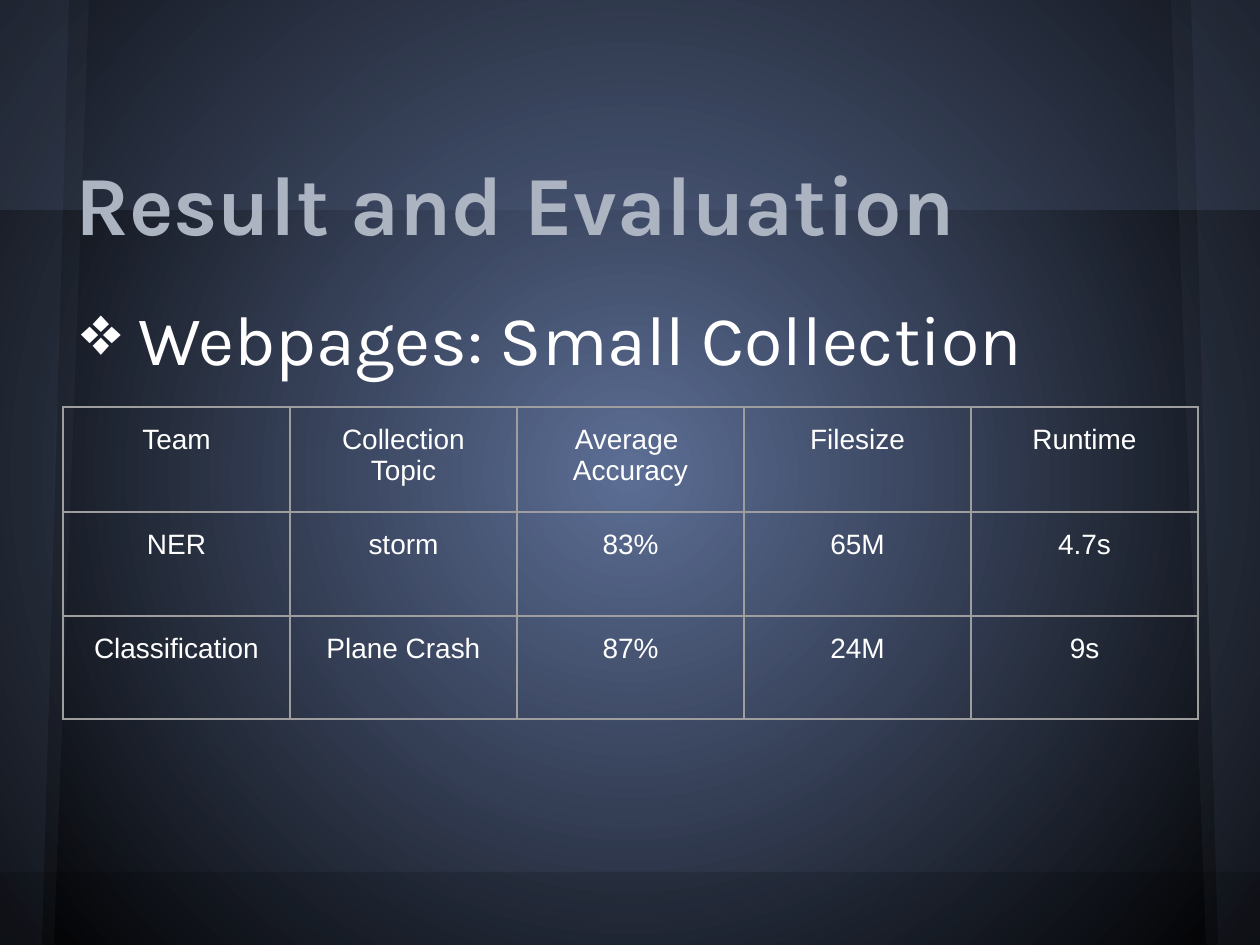
from typing import NamedTuple

from lxml.etree import SubElement
from pptx import Presentation
from pptx.dml.color import RGBColor
from pptx.enum.shapes import MSO_SHAPE
from pptx.enum.text import MSO_ANCHOR, PP_ALIGN
from pptx.oxml.ns import qn
from pptx.util import Emu, Pt

SCALE = 914400 / 168  # EMU per px
WIDTH, HEIGHT = 1260, 945
BLUE, SLATE, BLACK, WHITE = "5C6E95", "5A6378", "000000", "FFFFFF"
TITLE_COLOR, GRID_COLOR = "ACB4C2", "9E9E9E"
TABLE_LEFT, TABLE_TOP, COLUMN_WIDTH, CELL_MARGIN = 63, 407, 227, 17
ROW_HEIGHTS = [105, 104, 103]


class Band(NamedTuple):
    top: int
    height: int
    color: str
    opacity: int


class Wing(NamedTuple):
    top_width: int
    bottom_width: int
    color: str


class Heading(NamedTuple):
    text: str
    top: int
    height: int
    size: int
    color: str
    bold: bool
    anchor: MSO_ANCHOR
    bullet: str = ""


TOP_BAND = Band(0, 210, BLUE, 20)
BOTTOM_BAND = Band(872, 73, BLACK, 15)
WINGS = [Wing(89, 54, SLATE), Wing(69, 42, BLUE)]
HEADINGS = [
    Heading("Result and Evaluation", 146, 118, 36, TITLE_COLOR, True, MSO_ANCHOR.BOTTOM),
    Heading("Webpages: Small Collection", 284, 514, 30, WHITE, False, MSO_ANCHOR.TOP, "❖"),
]
RESULTS = [
    ["Team", "Collection\nTopic", "Average \nAccuracy", "Filesize", "Runtime"],
    ["NER", "storm", "83%", "65M", "4.7s"],
    ["Classification", "Plane Crash", "87%", "24M", "9s"],
]


def px(length: int) -> Emu:
    return Emu(round(length * SCALE))


def rgb(color: str) -> RGBColor:
    return RGBColor.from_string(color)


def paint(shape, color: str, opacity: int) -> None:
    """Fill a shape with a translucent colour, without line or shadow."""
    shape.shadow.inherit = False
    shape.line.fill.background()
    shape.fill.solid()
    shape.fill.fore_color.rgb = rgb(color)
    tint = shape.fill._xPr.find(".//" + qn("a:srgbClr"))
    SubElement(tint, qn("a:alpha"), val=str(opacity * 1000))


def add_span(para, text: str, font: str, size: int, color: str, bold: bool = False) -> None:
    span = para.add_run()
    span.text = text
    span.font.name = font
    span.font.size = Pt(size)
    span.font.bold = bold
    span.font.color.rgb = rgb(color)


def set_background(page) -> None:
    fill = page.background.fill
    fill.gradient()
    for stop, color in zip(fill.gradient_stops, [BLUE, BLACK]):
        stop.color.rgb = rgb(color)
    gradient = page._element.find(".//" + qn("a:gradFill"))
    gradient.remove(gradient.find(qn("a:lin")))
    circle = SubElement(gradient, qn("a:path"), {"path": "circle"})
    SubElement(circle, qn("a:fillToRect"), {side: "50000" for side in "ltrb"})


def add_band(page, band: Band) -> None:
    shape = page.shapes.add_shape(
        MSO_SHAPE.RECTANGLE, 0, px(band.top), px(WIDTH), px(band.height))
    paint(shape, band.color, band.opacity)


def add_wing(page, wing: Wing, edge: int, direction: int) -> None:
    """Draw a wing inwards from the slide edge; direction is 1 or -1."""
    builder = page.shapes.build_freeform(edge, 0, scale=SCALE)
    builder.add_line_segments([
        (edge + direction * wing.top_width, 0),
        (edge + direction * wing.bottom_width, HEIGHT),
        (edge, HEIGHT),
    ], close=True)
    paint(builder.convert_to_shape(), wing.color, 10)


def add_bullet(para, symbol: str, color: str) -> None:
    properties = para._p.get_or_add_pPr()
    properties.set("marL", str(px(63)))
    properties.set("indent", str(px(-57)))
    bullet_color = SubElement(properties, qn("a:buClr"))
    SubElement(bullet_color, qn("a:srgbClr"), val=color)
    SubElement(properties, qn("a:buChar"), char=symbol)


def add_heading(page, heading: Heading) -> None:
    box = page.shapes.add_textbox(px(63), px(heading.top), px(1134), px(heading.height))
    frame = box.text_frame
    frame.word_wrap = True
    frame.vertical_anchor = heading.anchor
    frame.margin_left = frame.margin_right = px(12)
    frame.margin_top = frame.margin_bottom = px(12)
    para = frame.paragraphs[0]
    if heading.bullet:
        add_bullet(para, heading.bullet, heading.color)
    add_span(para, heading.text, "Karla", heading.size, heading.color, heading.bold)


def fill_cell(cell, text: str) -> None:
    cell.margin_left = cell.margin_right = px(CELL_MARGIN)
    cell.margin_top = cell.margin_bottom = px(CELL_MARGIN)
    properties = cell._tc.get_or_add_tcPr()
    for side in "LRTB":
        border = SubElement(properties, qn(f"a:ln{side}"), w=str(Pt(0.75)))
        solid = SubElement(border, qn("a:solidFill"))
        SubElement(solid, qn("a:srgbClr"), val=GRID_COLOR)
    cell.fill.background()
    frame = cell.text_frame
    for index, line in enumerate(text.split("\n")):
        para = frame.add_paragraph() if index else frame.paragraphs[0]
        para.alignment = PP_ALIGN.CENTER
        add_span(para, line, "Arial", 12, WHITE)


def add_results(page) -> None:
    columns = len(RESULTS[0])
    table = page.shapes.add_table(
        len(RESULTS), columns, px(TABLE_LEFT), px(TABLE_TOP),
        px(COLUMN_WIDTH * columns), px(sum(ROW_HEIGHTS))).table
    table.first_row = table.horz_banding = False
    for column in table.columns:
        column.width = px(COLUMN_WIDTH)
    for row, height, texts in zip(table.rows, ROW_HEIGHTS, RESULTS):
        row.height = px(height)
        for cell, text in zip(row.cells, texts):
            fill_cell(cell, text)


def main() -> None:
    deck = Presentation()
    deck.slide_width, deck.slide_height = px(WIDTH), px(HEIGHT)
    page = deck.slides.add_slide(deck.slide_layouts[6])

    # Backdrop
    set_background(page)
    add_band(page, TOP_BAND)
    for edge, direction in [(0, 1), (WIDTH, -1)]:
        for wing in WINGS:
            add_wing(page, wing, edge, direction)
    add_band(page, BOTTOM_BAND)

    # Title and bullet line
    for heading in HEADINGS:
        add_heading(page, heading)

    # Results table
    add_results(page)
    deck.save("out.pptx")


if __name__ == "__main__":
    main()
